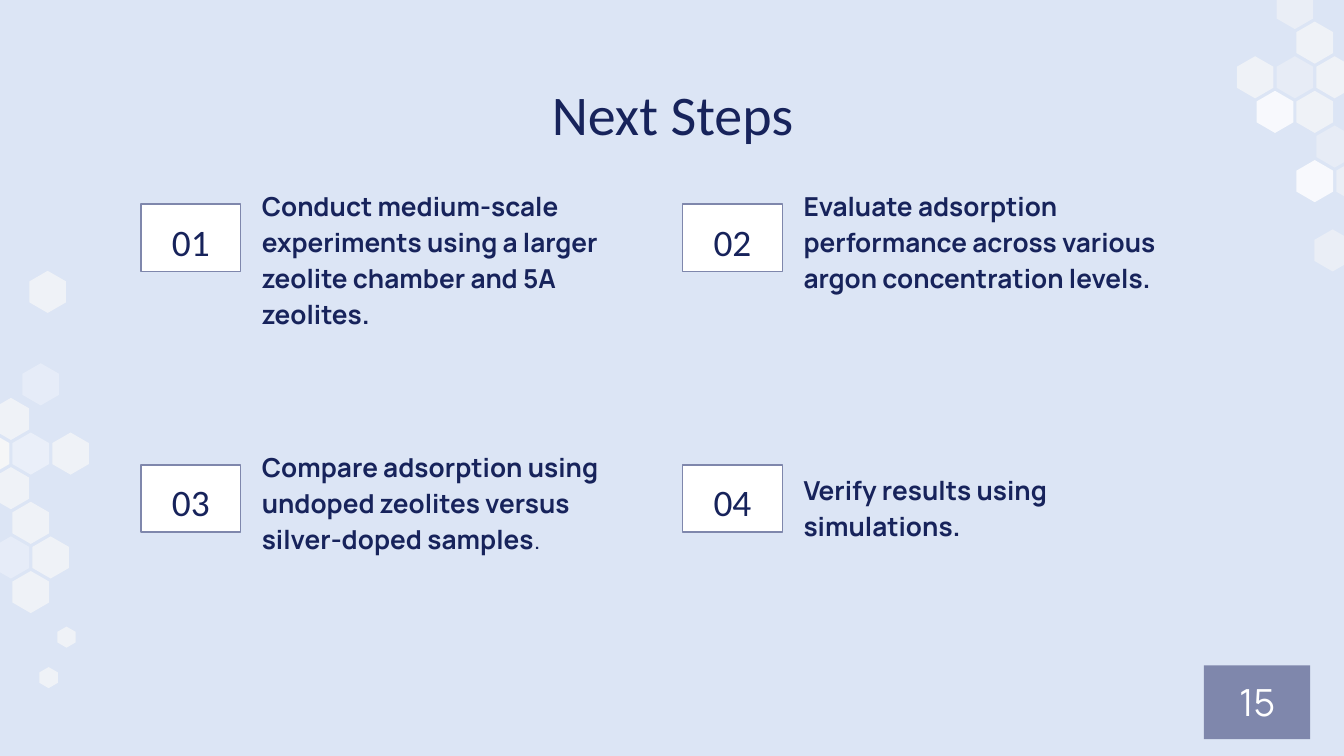
from dataclasses import dataclass
from typing import NamedTuple

from lxml.etree import SubElement
from pptx import Presentation
from pptx.dml.color import RGBColor
from pptx.enum.text import MSO_ANCHOR, PP_ALIGN
from pptx.oxml.ns import qn
from pptx.shapes.autoshape import Shape
from pptx.enum.shapes import MSO_SHAPE
from pptx.slide import Slide
from pptx.util import Pt


@dataclass(frozen=True)
class Theme:
    background: str = "DCE5F5"
    ink: str = "17235B"
    accent: str = "7F87AC"
    white: str = "FFFFFF"
    pale: str = "F8F8F8"
    heading_font: str = "Calibri"
    body_font: str = "Manrope"
    title_size: float = 30
    number_size: float = 20
    body_size: float = 14


class Box(NamedTuple):
    left: float
    top: float
    width: float
    height: float


class Hexagon(NamedTuple):
    """A honeycomb cell; column counts half cell widths, row counts cell rows."""
    column: float
    row: float
    opacity: int = 70
    color: str = "F8F8F8"
    scale: float = 1


class Step(NamedTuple):
    text: str
    column: int
    row: int
    drop: float = 0
    light_ending: str = ""


THEME = Theme()
MARGIN = 7.2
HEXAGON_HALF_WIDTH, HEXAGON_HALF_HEIGHT = 9.8, 11.3
COLUMN_STEP, ROW_STEP = 10.65, 18.55
STEP_LEFT, STEP_TOP = 75.6, 92.2
STEP_COLUMN_GAP, STEP_ROW_GAP = 290.2, 139.7

RIGHT_ORIGIN = (693.7, 4.3)
RIGHT_CLUSTER = [
    Hexagon(3, 5, 50), Hexagon(1.9, 7, 50), Hexagon(0, 0, 50),
    Hexagon(2, 4, 40), Hexagon(0, 2, 40),
    Hexagon(1, 5, 80, THEME.white), Hexagon(-1, 3, 80, THEME.white),
    Hexagon(2, 2), Hexagon(1, 1), Hexagon(1, 3), Hexagon(-2, 2),
]
LEFT_ORIGIN = (16.5, 243)
LEFT_CLUSTER = [
    Hexagon(2, 0), Hexagon(0.85, -4.67), Hexagon(0.5, -2, 30, THEME.white),
    Hexagon(0, 0, 40, THEME.white), Hexagon(0, 2), Hexagon(1, 3), Hexagon(0, 4),
    Hexagon(-1, -1), Hexagon(-2, 0, 90), Hexagon(-1, 1),
    Hexagon(-1, 3, 30, THEME.white),
    Hexagon(1.8, 5.3, scale=0.5), Hexagon(0.9, 6.47, scale=0.5),
]
STEPS = [
    Step("Conduct medium-scale experiments using a larger zeolite chamber and 5A zeolites.", 0, 0),
    Step("Evaluate adsorption performance across various argon concentration levels.", 1, 0),
    Step("Compare adsorption using undoped zeolites versus silver-doped samples", 0, 1,
         light_ending="."),
    Step("Verify results using simulations.", 1, 1, drop=12.3),
]


def draw_hexagon(slide: Slide, hexagon: Hexagon, origin: tuple[float, float]) -> None:
    center_x = origin[0] + hexagon.column * COLUMN_STEP
    center_y = origin[1] + hexagon.row * ROW_STEP
    corners = [(-1, 0.5), (0, 1), (1, 0.5), (1, -0.5), (0, -1), (-1, -0.5)]
    points = [
        (Pt(center_x + x * HEXAGON_HALF_WIDTH * hexagon.scale),
         Pt(center_y + y * HEXAGON_HALF_HEIGHT * hexagon.scale))
        for x, y in corners
    ]
    builder = slide.shapes.build_freeform(*points[0])
    builder.add_line_segments(points[1:], close=True)
    shape = builder.convert_to_shape()
    shape.shadow.inherit = False
    shape.line.fill.background()
    shape.fill.solid()
    shape.fill.fore_color.rgb = RGBColor.from_string(hexagon.color)
    color = shape.fill._xPr.find(qn("a:solidFill"))[0]
    SubElement(color, qn("a:alpha")).set("val", str(hexagon.opacity * 1000))


def write(shape: Shape, text: str, font: str, size: float, color: str = THEME.ink,
          align: PP_ALIGN = PP_ALIGN.CENTER, anchor: MSO_ANCHOR = MSO_ANCHOR.TOP,
          spacing: float = 1, bold: bool = False, light_ending: str = "") -> None:
    """Fill the shape with one paragraph; light_ending follows without bold."""
    frame = shape.text_frame
    frame.text = text
    frame.word_wrap = True
    frame.vertical_anchor = anchor
    frame.margin_left = frame.margin_right = Pt(MARGIN)
    frame.margin_top = frame.margin_bottom = Pt(MARGIN)
    paragraph = frame.paragraphs[0]
    paragraph.alignment = align
    paragraph.line_spacing = spacing
    if light_ending:
        paragraph.add_run().text = light_ending
    for index, run in enumerate(paragraph.runs):
        run.font.name = font
        run.font.size = Pt(size)
        run.font.bold = bold and index == 0
        run.font.color.rgb = RGBColor.from_string(color)


def add_text_box(slide: Slide, box: Box) -> Shape:
    return slide.shapes.add_textbox(*map(Pt, box))


def add_rectangle(slide: Slide, box: Box, fill: str, line: str | None = None) -> Shape:
    shape = slide.shapes.add_shape(MSO_SHAPE.RECTANGLE, *map(Pt, box))
    shape.shadow.inherit = False
    shape.fill.solid()
    shape.fill.fore_color.rgb = RGBColor.from_string(fill)
    if line:
        shape.line.color.rgb = RGBColor.from_string(line)
        shape.line.width = Pt(0.75)
    else:
        shape.line.fill.background()
    return shape


def draw_step(slide: Slide, number: int, step: Step) -> None:
    left = STEP_LEFT + step.column * STEP_COLUMN_GAP
    top = STEP_TOP + step.row * STEP_ROW_GAP
    description = add_text_box(slide, Box(left + 57.6, top + step.drop, 220.3, 70.6 - 2 * step.drop))
    write(description, step.text, THEME.body_font, THEME.body_size, align=PP_ALIGN.LEFT,
          spacing=1.15, bold=True, light_ending=step.light_ending)
    badge = add_rectangle(slide, Box(left, top + 17.2, 53.3, 36), THEME.white, THEME.accent)
    write(badge, f"{number:02}", THEME.heading_font, THEME.number_size,
          anchor=MSO_ANCHOR.MIDDLE, spacing=1.15)


def main() -> None:
    presentation = Presentation()
    presentation.slide_width, presentation.slide_height = Pt(720), Pt(405)
    slide = presentation.slides.add_slide(presentation.slide_layouts[6])
    slide.background.fill.solid()
    slide.background.fill.fore_color.rgb = RGBColor.from_string(THEME.background)

    for origin, cluster in ((RIGHT_ORIGIN, RIGHT_CLUSTER), (LEFT_ORIGIN, LEFT_CLUSTER)):
        for hexagon in cluster:
            draw_hexagon(slide, hexagon, origin)

    title = add_text_box(slide, Box(56.9, 35.3, 607, 45.4))
    write(title, "Next Steps", THEME.heading_font, THEME.title_size)
    for number, step in enumerate(STEPS, start=1):
        draw_step(slide, number, step)
    page_number = add_rectangle(slide, Box(645, 356.4, 56.9, 39.6), THEME.accent)
    write(page_number, "15", THEME.body_font, THEME.number_size, THEME.white)
    presentation.save("out.pptx")


if __name__ == "__main__":
    main()
